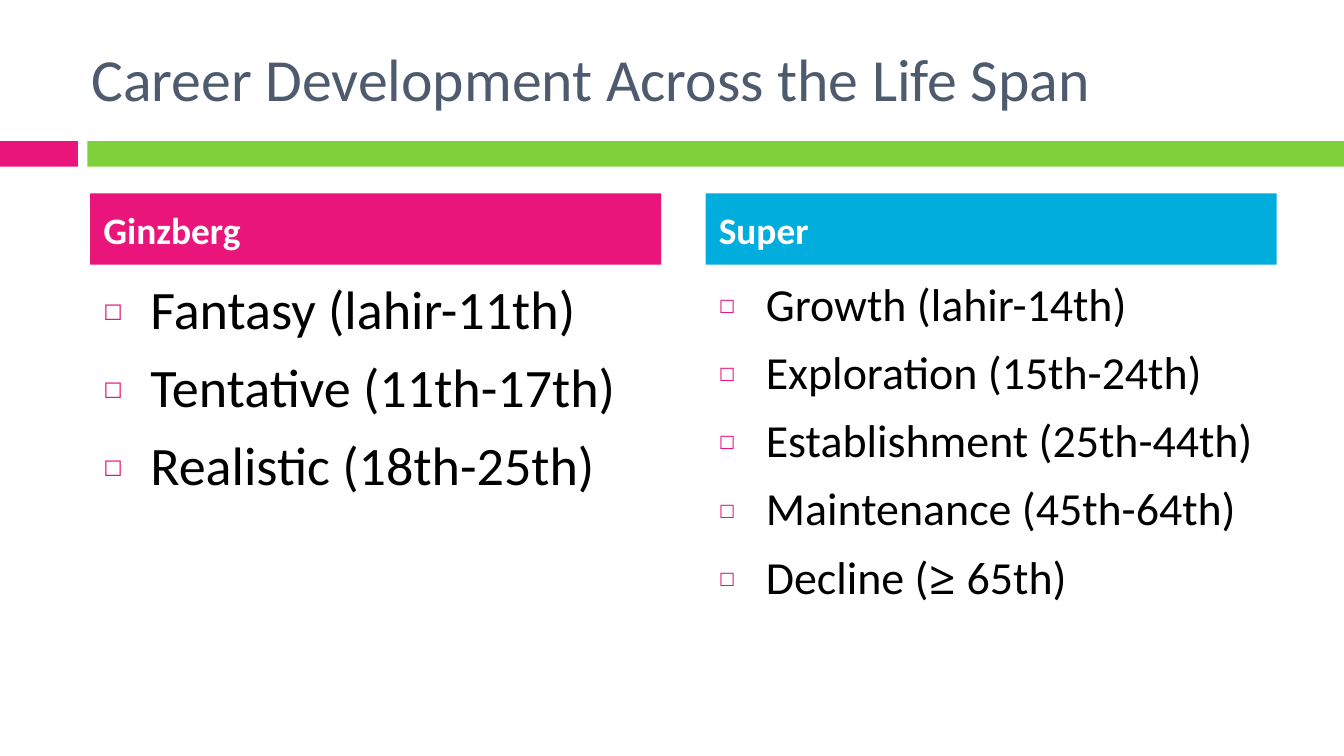
import pptx
import pptx.util
import pptx.dml.color
import pptx.enum.shapes
import pptx.enum.text
import pptx.oxml.ns
from lxml import etree

Inches, Pt = pptx.util.Inches, pptx.util.Pt
MIDDLE = pptx.enum.text.MSO_ANCHOR.MIDDLE
FONT, SYMBOL_FONT = "Calibri", "Noto Sans Mono"
PINK, GREEN, BLUE = "EA157A", "7FD13B", "00ADDC"
SLATE, BLACK, WHITE = "4E5B6F", "000000", "FFFFFF"

COLUMNS = [
    ("Ginzberg", PINK, 29,
     ["Fantasy (lahir-11th)", "Tentative (11th-17th)", "Realistic (18th-25th)"]),
    ("Super", BLUE, 24.6,
     ["Growth (lahir-14th)", "Exploration (15th-24th)", "Establishment (25th-44th)",
      "Maintenance (45th-64th)", "Decline (≥ 65th)"]),
]


def rgb(color):
    return pptx.dml.color.RGBColor.from_string(color)


def add_rect(slide, x, y, w, h, color):
    sp = slide.shapes.add_shape(pptx.enum.shapes.MSO_SHAPE.RECTANGLE,
                                Inches(x), Inches(y), Inches(w), Inches(h))
    sp.shadow.inherit = False
    sp.fill.solid()
    sp.fill.fore_color.rgb = rgb(color)
    sp.line.fill.background()
    return sp


def add_textbox(slide, x, y, w, h):
    sp = slide.shapes.add_textbox(Inches(x), Inches(y), Inches(w), Inches(h))
    sp.text_frame.word_wrap = True
    return sp


def add_run(p, text, size, color, bold=False, font=FONT):
    r = p.add_run()
    r.text = text
    r.font.name = font
    r.font.size = Pt(size)
    r.font.bold = bold
    r.font.color.rgb = rgb(color)


def set_bullet(p, char, color, percent, indent):
    pPr = p._p.get_or_add_pPr()
    pPr.set("marL", str(Inches(indent)))
    pPr.set("indent", str(-Inches(indent)))
    qn = pptx.oxml.ns.qn
    clr = etree.SubElement(pPr, qn("a:buClr"))
    etree.SubElement(clr, qn("a:srgbClr"), val=color)
    etree.SubElement(pPr, qn("a:buSzPct"), val=str(percent * 1000))
    etree.SubElement(pPr, qn("a:buFont"), typeface=SYMBOL_FONT)
    etree.SubElement(pPr, qn("a:buChar"), char=char)


def add_title(slide, x, y, w, h, text):
    tf = add_textbox(slide, x, y, w, h).text_frame
    tf.vertical_anchor = MIDDLE
    add_run(tf.paragraphs[0], text, 32, SLATE)


def add_divider(slide, y, h, width):
    add_rect(slide, 0, y, 0.58, h, PINK)
    add_rect(slide, 0.65, y, width - 0.65, h, GREEN)


def add_column(slide, x, y, w, h, heading, color, size, items):
    """Place a coloured heading bar with a bulleted list below it."""
    bar_h, list_top = 0.53, 0.56
    tf = add_rect(slide, x, y, w, bar_h, color).text_frame
    tf.vertical_anchor = MIDDLE
    p = tf.paragraphs[0]
    p.alignment = pptx.enum.text.PP_ALIGN.LEFT
    p.space_before = Pt(7)
    add_run(p, heading, 20, WHITE, bold=True)

    tf = add_textbox(slide, x, y + list_top, w, h - list_top).text_frame
    for i, item in enumerate(items):
        p = tf.add_paragraph() if i else tf.paragraphs[0]
        p.space_before = Pt(7)
        set_bullet(p, "◻", PINK, 60, 0.35)
        before, sign, after = item.partition("≥")
        add_run(p, before, size, BLACK)
        if sign:
            add_run(p, sign, size, BLACK, font=SYMBOL_FONT)
            add_run(p, after, size, BLACK)


def main():
    prs = pptx.Presentation()
    prs.slide_width = Inches(10)
    prs.slide_height = prs.slide_width * 9 // 16
    slide = prs.slides.add_slide(prs.slide_layouts[6])
    add_divider(slide, 1.05, 0.19, 10)
    add_title(slide, 0.58, 0.22, 8.92, 0.71, "Career Development Across the Life Span")
    left, col_w, gap = 0.67, 4.25, 0.33
    for i, column in enumerate(COLUMNS):
        add_column(slide, left + i * (col_w + gap), 1.44, col_w, 3.5, *column)
    prs.save("out.pptx")


if __name__ == "__main__":
    main()
